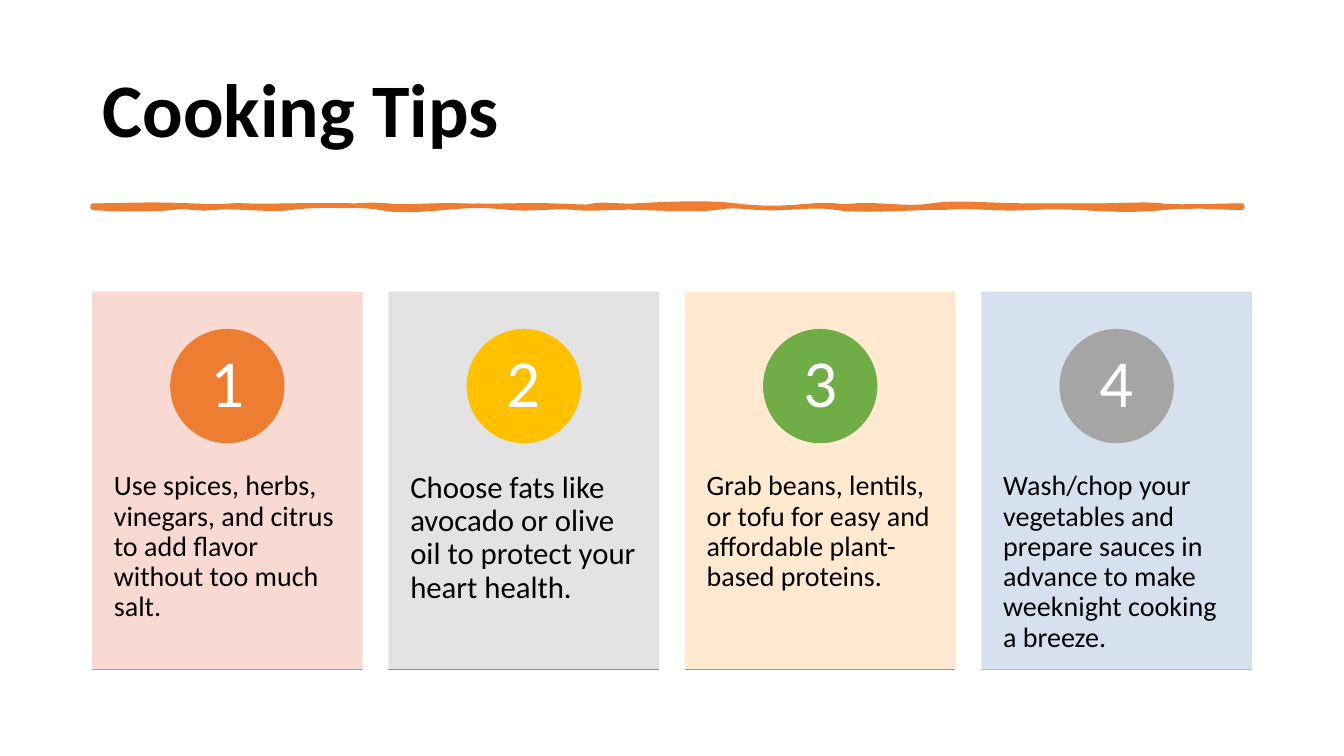
from lxml import etree
from pptx import Presentation
from pptx.dml.color import RGBColor
from pptx.enum.shapes import MSO_SHAPE
from pptx.enum.text import MSO_ANCHOR, PP_ALIGN
from pptx.oxml.ns import qn
from pptx.util import Inches, Pt

RECT, OVAL = MSO_SHAPE.RECTANGLE, MSO_SHAPE.OVAL
TOP, MIDDLE = MSO_ANCHOR.TOP, MSO_ANCHOR.MIDDLE
LEFT, CENTER = PP_ALIGN.LEFT, PP_ALIGN.CENTER

FONT = "Calibri"
TITLE = "Cooking Tips"
COLORS = {
    "black": "000000", "white": "FFFFFF", "orange": "ED7D31",
    "gold": "FFC000", "green": "70AD47", "gray": "A5A5A5", "blue": "5B9BD5",
    "rose": "F8D7CE", "silver": "E1E1E1", "cream": "FFE8CC", "sky": "D2DEEF",
}
TIPS = [
    ("Use spices, herbs, vinegars, and citrus to add flavor without too much salt.",
     20, "rose", "orange", "gray"),
    ("Choose fats like avocado or olive oil to protect your heart health.",
     22, "silver", "gold", "blue"),
    ("Grab beans, lentils, or tofu for easy and affordable plant-based proteins.",
     20, "cream", "green", "orange"),
    ("Wash/chop your vegetables and prepare sauces in advance to make weeknight cooking a breeze.",
     20, "sky", "gray", "gold"),
]
START = (0.92, 2.04)
CURVES = [
    (1.19, 2.04, 1.44, 2.02, 1.9, 2.04), (2.37, 2.06, 2.2, 2.03, 2.44, 2.04),
    (2.67, 2.05, 3.03, 2.03, 3.31, 2.04), (3.6, 2.05, 3.59, 2.02, 3.84, 2.04),
    (4.1, 2.06, 4.23, 2.03, 4.6, 2.04), (4.98, 2.05, 5.14, 2.03, 5.48, 2.04),
    (5.81, 2.05, 5.81, 2.06, 5.89, 2.04), (5.98, 2.02, 6.15, 2.05, 6.31, 2.04),
    (6.47, 2.03, 7.01, 2, 7.3, 2.04), (7.59, 2.08, 7.81, 2.06, 8.06, 2.04),
    (8.31, 2.02, 8.27, 2.06, 8.48, 2.04), (8.68, 2.02, 9.01, 2.08, 9.24, 2.04),
    (9.47, 2, 9.82, 2.04, 10.23, 2.04), (10.63, 2.04, 10.63, 2.04, 10.87, 2.04),
    (11.12, 2.04, 11.36, 2.02, 11.52, 2.04), (11.68, 2.06, 12.03, 2.04, 12.32, 2.04),
    (12.32, 2.05, 12.32, 2.05, 12.32, 2.06), (12.05, 2.06, 11.89, 2.03, 11.56, 2.06),
    (11.22, 2.09, 11.1, 2.08, 10.68, 2.06), (10.27, 2.04, 10.23, 2.08, 9.81, 2.06),
    (9.39, 2.04, 9.52, 2.06, 9.28, 2.06), (9.04, 2.06, 8.51, 2.1, 8.29, 2.06),
    (8.06, 2.02, 7.82, 2.08, 7.53, 2.06), (7.24, 2.04, 7.25, 2.04, 7.11, 2.06),
    (6.98, 2.08, 6.61, 2.07, 6.35, 2.06), (6.09, 2.05, 5.9, 2.08, 5.7, 2.06),
    (5.51, 2.04, 5.28, 2.08, 5.06, 2.06), (4.83, 2.04, 4.73, 2.03, 4.41, 2.06),
    (4.09, 2.09, 3.9, 2.09, 3.77, 2.06), (3.63, 2.03, 3.1, 2.03, 2.89, 2.06),
    (2.68, 2.09, 2.35, 2.04, 2.13, 2.06), (1.92, 2.08, 1.89, 2.04, 1.71, 2.06),
    (1.54, 2.08, 1.14, 2.08, 0.92, 2.06), (0.92, 2.05, 0.92, 2.05, 0.92, 2.04),
]

EDGE, CARD_W, PITCH = 0.92, 2.67, 2.94
CARD_Y, CARD_H = 2.9, 3.74
DISC, DISC_Y = 1.12, 3.27
MARK = 0.79
BODY_Y, BODY_H = 4.32, 2.25

deck = Presentation()
deck.slide_width, deck.slide_height = Inches(13.33), Inches(7.5)
slide = deck.slides.add_slide(deck.slide_layouts[6])
shapes = slide.shapes


def rgb(name):
    return RGBColor.from_string(COLORS[name])


def box(x, y, w, h):
    return [Inches(v) for v in (x, y, w, h)]


def paint(shape, color, width=1):
    shape.shadow.inherit = False
    shape.fill.solid()
    shape.fill.fore_color.rgb = rgb(color)
    shape.line.color.rgb = rgb(color)
    shape.line.width = Pt(width)


def fade(shape, share):
    for node in shape._element.spPr.iter(qn("a:srgbClr")):
        etree.SubElement(node, qn("a:alpha")).set("val", str(share * 1000))


def write(place, text, size, color, anchor, align, pads, bold=False):
    frame = shapes.add_textbox(*place).text_frame
    frame.word_wrap = True
    frame.vertical_anchor = anchor
    frame.margin_left = frame.margin_right = Inches(pads[0])
    frame.margin_top = frame.margin_bottom = Inches(pads[1])
    para = frame.paragraphs[0]
    para.alignment = align
    para.line_spacing = 0.9
    run = para.add_run()
    run.text = text
    run.font.name, run.font.size, run.font.bold = FONT, Pt(size), bold
    run.font.color.rgb = rgb(color)


def draw(start, curves):
    pen = shapes.build_freeform(*[Inches(v) for v in start])
    pen.add_line_segments([(Inches(c[4]), Inches(c[5])) for c in curves], close=True)
    shape = pen.convert_to_shape()
    sides = list(shape._element.spPr.iter(qn("a:lnTo")))
    for side, curve in zip(sides, curves):
        bend = etree.Element(qn("a:cubicBezTo"))
        for x, y in zip(curve[::2], curve[1::2]):
            point = etree.SubElement(bend, qn("a:pt"))
            point.set("x", str(Inches(x) - shape.left))
            point.set("y", str(Inches(y) - shape.top))
        side.getparent().replace(side, bend)
    return shape


write(box(EDGE, 0.4, 11.5, 1.45), TITLE, 54, "black", MIDDLE, LEFT, (0.1, 0.05), True)

stroke = draw(START, CURVES)
paint(stroke, "orange", 3.25)
etree.SubElement(stroke.line._get_or_add_ln(), qn("a:round"))

for i, (tip, size, tint, tone, trim) in enumerate(TIPS):
    x = EDGE + i * PITCH
    card = shapes.add_shape(RECT, *box(x, CARD_Y, CARD_W, CARD_H))
    paint(card, tint)
    fade(card, 90)

    write(box(x, BODY_Y, CARD_W, BODY_H), tip, size, "black", TOP, LEFT, (0.21, 0.36))

    disc = shapes.add_shape(OVAL, *box(x + (CARD_W - DISC) / 2, DISC_Y, DISC, DISC))
    paint(disc, tone)
    spot = box(x + (CARD_W - MARK) / 2, DISC_Y + (DISC - MARK) / 2, MARK, MARK)
    write(spot, str(i + 1), 48, "white", MIDDLE, CENTER, (0.09, 0.01))

    base = shapes.add_shape(RECT, *box(x, CARD_Y + CARD_H, CARD_W, 0))
    paint(base, trim)

deck.save("out.pptx")
